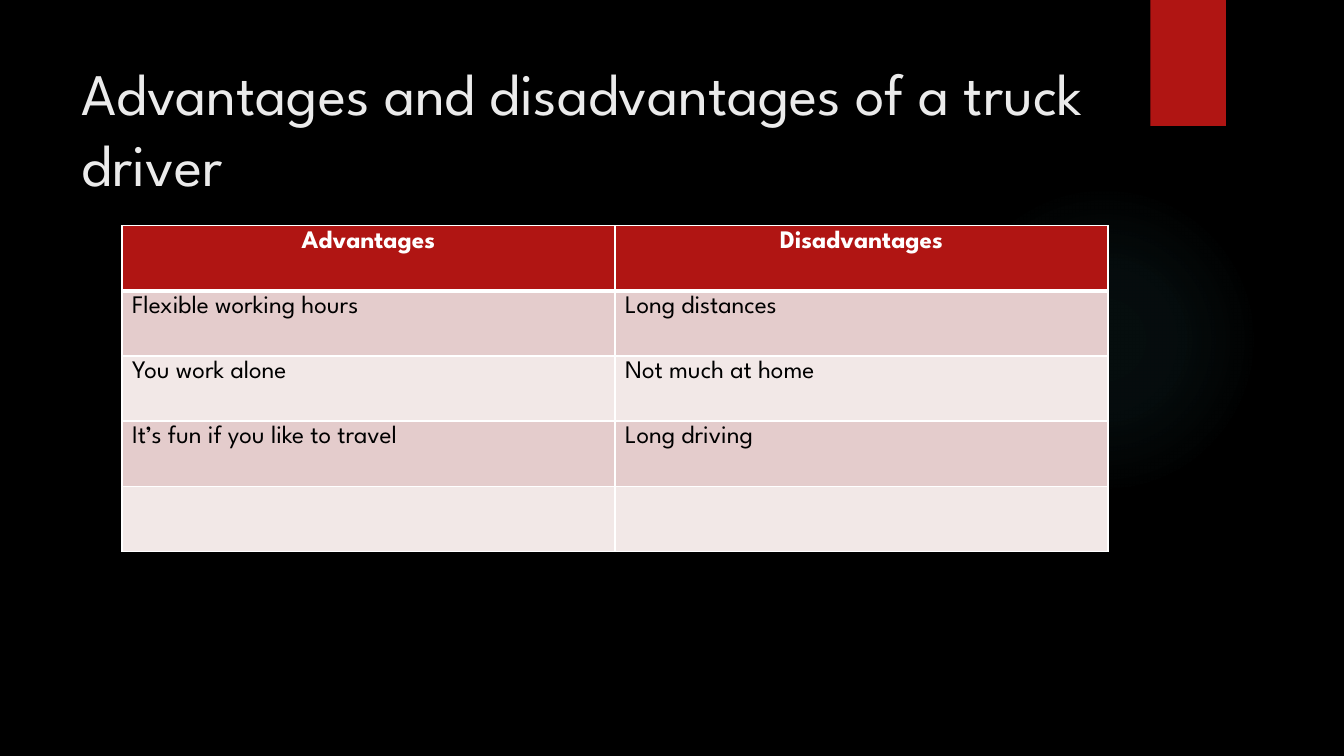
from lxml import etree
from pptx import Presentation
from pptx import util as u
from pptx.dml.color import RGBColor
from pptx.enum import shapes, text
from pptx.oxml import parse_xml
from pptx.oxml.ns import qn

FONT = "League Spartan"
COLORS = {
    "background": "000000",
    "accent": "B01513",
    "glow": "50B9C1",
    "title": "EBEBEB",
    "white": "FFFFFF",
    "black": "000000",
    "odd_row": "E4CCCC",
    "even_row": "F2E8E7",
}
GLOW_STOPS = [(0, 7), (36, 6), (69, 0)]
ROWS = [
    ("Advantages", "Disadvantages"),
    ("Flexible working hours", "Long distances"),
    ("You work alone", "Not much at home"),
    ("It’s fun if you like to travel", "Long driving"),
    ("", ""),
]
DRAWING_NS = "http://schemas.openxmlformats.org/drawingml/2006/main"


def color(name):
    return RGBColor.from_string(COLORS[name])


def set_format(target, values):
    for key, value in values.items():
        setattr(target, key, value)


def style_font(font, size, color_name, bold=False):
    set_format(font, {"name": FONT, "size": u.Pt(size), "bold": bold})
    font.color.rgb = color(color_name)


def add_plain_shape(slide, kind, left, top, width, height):
    decoration = slide.shapes.add_shape(
        kind, u.Inches(left), u.Inches(top), u.Inches(width), u.Inches(height))
    decoration.shadow.inherit = False
    decoration.line.fill.background()
    return decoration


def add_glow(slide):
    glow = add_plain_shape(slide, shapes.MSO_SHAPE.OVAL, 9.41, 1.83, 3.08, 3.08)
    glow.fill.background()
    stops = "".join(
        f'<a:gs pos="{position * 1000}"><a:srgbClr val="{COLORS["glow"]}">'
        f'<a:alpha val="{alpha * 1000}"/></a:srgbClr></a:gs>'
        for position, alpha in GLOW_STOPS)
    gradient = parse_xml(
        f'<a:gradFill xmlns:a="{DRAWING_NS}" rotWithShape="1">'
        f'<a:gsLst>{stops}</a:gsLst><a:path path="circle">'
        '<a:fillToRect l="50000" t="50000" r="50000" b="50000"/>'
        '</a:path></a:gradFill>')
    properties = glow.element.spPr
    properties.replace(properties.find(qn("a:noFill")), gradient)


def add_corner_tab(slide):
    tab = add_plain_shape(slide, shapes.MSO_SHAPE.RECTANGLE, 11.41, 0, 0.75, 1.25)
    tab.fill.solid()
    tab.fill.fore_color.rgb = color("accent")


def add_title(slide, wording):
    title = slide.shapes.title
    set_format(title, {
        "left": u.Inches(0.71), "top": u.Inches(0.5),
        "width": u.Inches(10.29), "height": u.Inches(1.53),
    })
    frame = title.text_frame
    frame.text = wording
    set_format(frame, {
        "word_wrap": True,
        "auto_size": text.MSO_AUTO_SIZE.NONE,
        "vertical_anchor": text.MSO_ANCHOR.MIDDLE,
    })
    heading = frame.paragraphs[0]
    heading.alignment = text.PP_ALIGN.LEFT
    style_font(heading.runs[0].font, 42, "title")


def add_borders(cell, widths):
    properties = cell._tc.get_or_add_tcPr()
    for side, width in widths.items():
        border = etree.SubElement(properties, qn(f"a:ln{side}"), w=str(u.Pt(width)))
        fill = etree.SubElement(border, qn("a:solidFill"))
        etree.SubElement(fill, qn("a:srgbClr"), val=COLORS["white"])


def style_cell(cell, row, wording):
    header = row == 0
    add_borders(cell, {"L": 1, "R": 1, "T": 3 if row == 1 else 1, "B": 3 if header else 1})
    cell.fill.solid()
    row_color = "odd_row" if row % 2 else "even_row"
    cell.fill.fore_color.rgb = color("accent" if header else row_color)
    cell.text = wording
    entry = cell.text_frame.paragraphs[0]
    entry.alignment = text.PP_ALIGN.CENTER if header else text.PP_ALIGN.LEFT
    for run in entry.runs:
        style_font(run.font, 18, "white" if header else "black", header)


def add_comparison(slide):
    comparison = slide.shapes.add_table(
        len(ROWS), 2, u.Inches(1.21), u.Inches(2.24),
        u.Inches(9.78), u.Inches(3.23)).table
    for row, wordings in enumerate(ROWS):
        for column, wording in enumerate(wordings):
            style_cell(comparison.cell(row, column), row, wording)


def main():
    deck = Presentation()
    set_format(deck, {"slide_width": u.Inches(13.33), "slide_height": u.Inches(7.5)})
    slide = deck.slides.add_slide(deck.slide_layouts[5])
    slide.background.fill.solid()
    slide.background.fill.fore_color.rgb = color("background")
    add_glow(slide)
    add_corner_tab(slide)
    add_title(slide, "Advantages and disadvantages of a truck driver")
    add_comparison(slide)
    deck.save("out.pptx")


if __name__ == "__main__":
    main()
